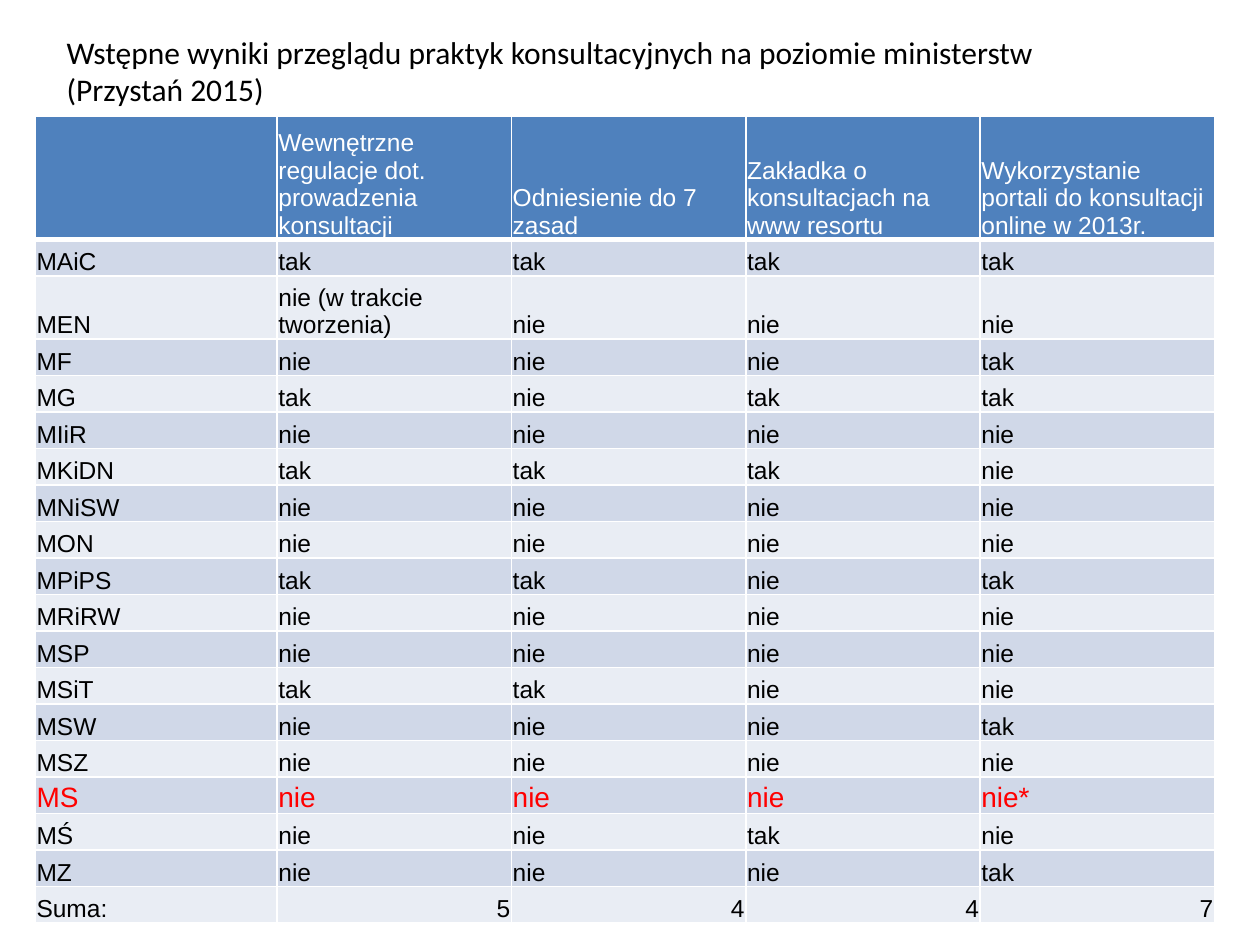
from lxml import etree
from pptx import Presentation
from pptx.dml.color import RGBColor
from pptx.enum.text import MSO_ANCHOR, PP_ALIGN
from pptx.oxml.ns import qn
from pptx.util import Inches, Pt

BOTTOM = MSO_ANCHOR.BOTTOM
LEFT, RIGHT = PP_ALIGN.LEFT, PP_ALIGN.RIGHT

BLACK, WHITE, RED = "000000", "FFFFFF", "FF0000"
HEADER_FILL = "4F81BD"
BAND_FILLS = ("E9EDF4", "D0D8E8")

TITLE_LINES = (
    "Wstępne wyniki przeglądu praktyk konsultacyjnych na poziomie ministerstw",
    "(Przystań 2015)",
)
HEADER = (
    "",
    "Wewnętrzne regulacje dot. prowadzenia konsultacji",
    "Odniesienie do 7 zasad",
    "Zakładka o konsultacjach na www resortu",
    "Wykorzystanie portali do konsultacji online w 2013r.",
)
MINISTRIES = (
    ("MAiC", "tak", "tak", "tak", "tak"),
    ("MEN", "nie (w trakcie tworzenia)", "nie", "nie", "nie"),
    ("MF", "nie", "nie", "nie", "tak"),
    ("MG", "tak", "nie", "tak", "tak"),
    ("MIiR", "nie", "nie", "nie", "nie"),
    ("MKiDN", "tak", "tak", "tak", "nie"),
    ("MNiSW", "nie", "nie", "nie", "nie"),
    ("MON", "nie", "nie", "nie", "nie"),
    ("MPiPS", "tak", "tak", "nie", "tak"),
    ("MRiRW", "nie", "nie", "nie", "nie"),
    ("MSP", "nie", "nie", "nie", "nie"),
    ("MSiT", "tak", "tak", "nie", "nie"),
    ("MSW", "nie", "nie", "nie", "tak"),
    ("MSZ", "nie", "nie", "nie", "nie"),
    ("MS", "nie", "nie", "nie", "nie*"),
    ("MŚ", "nie", "nie", "tak", "nie"),
    ("MZ", "nie", "nie", "nie", "tak"),
)
TOTALS = ("Suma:", "5", "4", "4", "7")
ROWS = (HEADER, *MINISTRIES, TOTALS)

COLUMN_WIDTHS = (1.92, 1.86, 1.86, 1.86, 1.86)
ROW_HEIGHT = 0.29
TALL_ROWS = {"": 0.98, "MEN": 0.5}
CELL_FORMAT = {
    "vertical_anchor": BOTTOM,
    "margin_left": Inches(0.01),
    "margin_right": Inches(0.01),
    "margin_top": Inches(0.01),
    "margin_bottom": 0,
}


def rgb(color):
    return RGBColor.from_string(color)


def style_font(font, name, size, color):
    values = {"name": name, "size": Pt(size), "bold": False}
    for key, value in values.items():
        setattr(font, key, value)
    font.color.rgb = rgb(color)


def add_title(slide):
    box = slide.shapes.add_textbox(Inches(0.43), Inches(0.21), Inches(9.29), Inches(0.71))
    frame = box.text_frame
    frame.word_wrap = True
    frame.text = "\n".join(TITLE_LINES)
    for paragraph in frame.paragraphs:
        style_font(paragraph.runs[0].font, "Calibri", 18, BLACK)


def add_borders(cell, widths):
    """Draw white borders; widths maps each side (L, R, T, B) to points."""
    properties = cell._tc.get_or_add_tcPr()
    for side, width in widths.items():
        line = etree.SubElement(properties, qn(f"a:ln{side}"), w=str(Pt(width)))
        fill = etree.SubElement(line, qn("a:solidFill"))
        etree.SubElement(fill, qn("a:srgbClr"), val=WHITE)


def row_style(index, label):
    """Return fill, text colour and text size of a table row."""
    if index == 0:
        return HEADER_FILL, WHITE, 14
    color, size = (RED, 16) if label == "MS" else (BLACK, 14)
    return BAND_FILLS[index % 2], color, size


def fill_cell(cell, text, fill, color, size):
    for key, value in CELL_FORMAT.items():
        setattr(cell, key, value)
    cell.fill.solid()
    cell.fill.fore_color.rgb = rgb(fill)
    if text:
        cell.text = text
        paragraph = cell.text_frame.paragraphs[0]
        paragraph.alignment = RIGHT if text.isdigit() else LEFT
        style_font(paragraph.runs[0].font, "Arial", size, color)


def add_results_table(slide):
    heights = [TALL_ROWS.get(row[0], ROW_HEIGHT) for row in ROWS]
    table = slide.shapes.add_table(
        len(ROWS), len(HEADER), Inches(0.28), Inches(0.92),
        Inches(sum(COLUMN_WIDTHS)), Inches(sum(heights)),
    ).table
    for column, width in zip(table.columns, COLUMN_WIDTHS):
        column.width = Inches(width)
    for index, (texts, height) in enumerate(zip(ROWS, heights)):
        table.rows[index].height = Inches(height)
        borders = {"L": 1, "R": 1, "T": 3 if index == 1 else 1, "B": 3 if index == 0 else 1}
        for cell, text in zip(table.rows[index].cells, texts):
            add_borders(cell, borders)
            fill_cell(cell, text, *row_style(index, texts[0]))


def main():
    presentation = Presentation()
    presentation.slide_width = Inches(10)
    presentation.slide_height = Inches(7.5)
    slide = presentation.slides.add_slide(presentation.slide_layouts[6])
    add_results_table(slide)
    add_title(slide)
    presentation.save("out.pptx")


if __name__ == "__main__":
    main()
